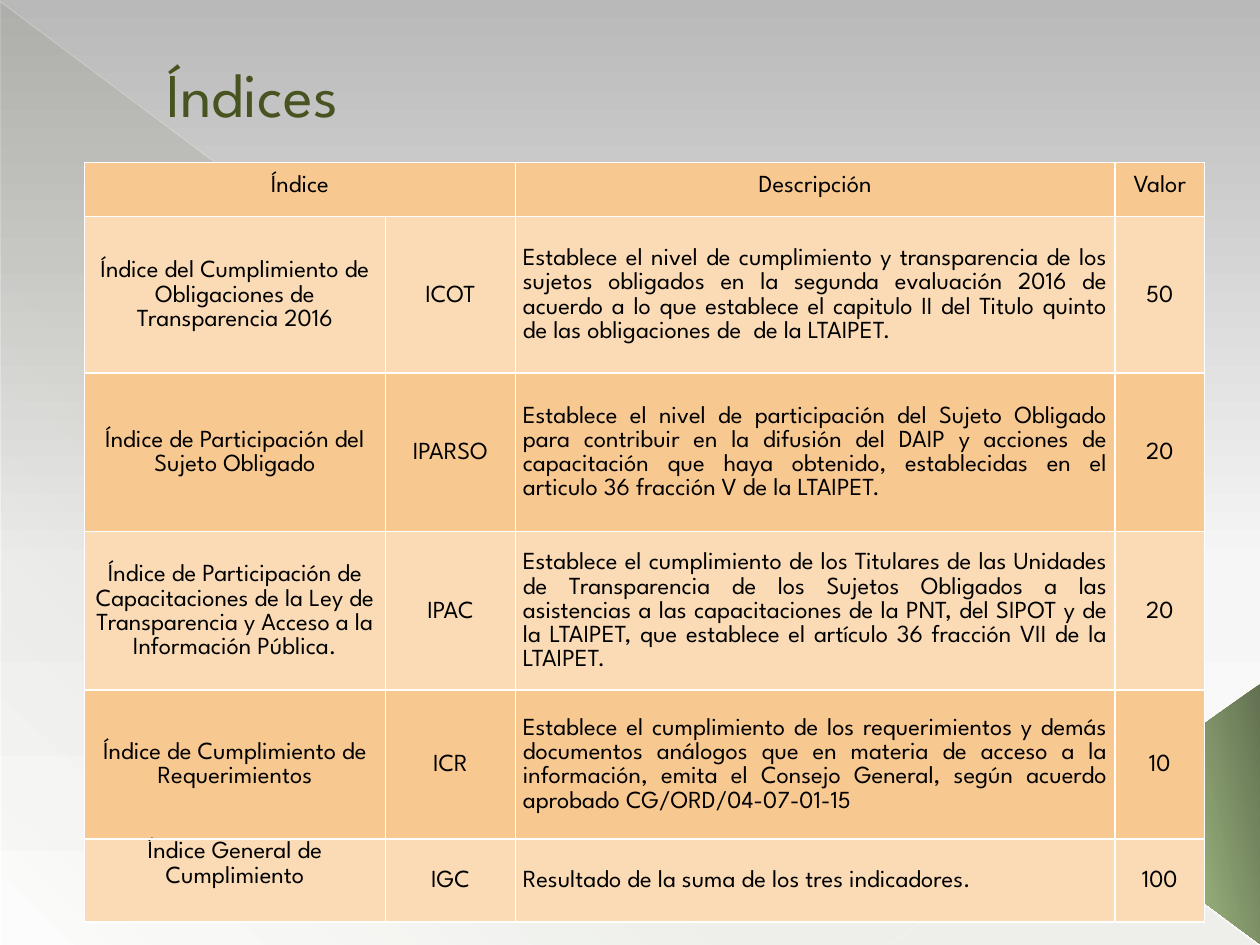
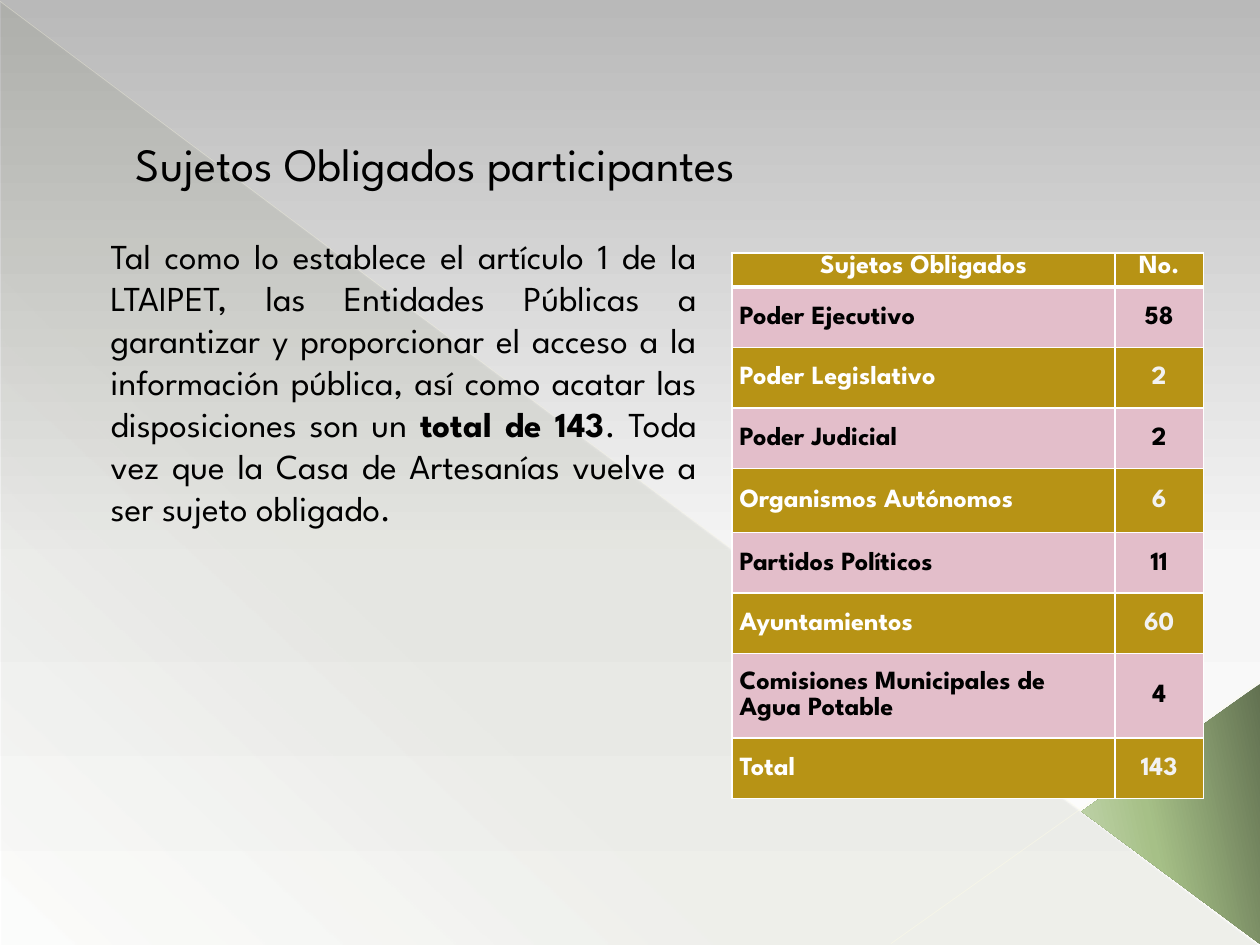
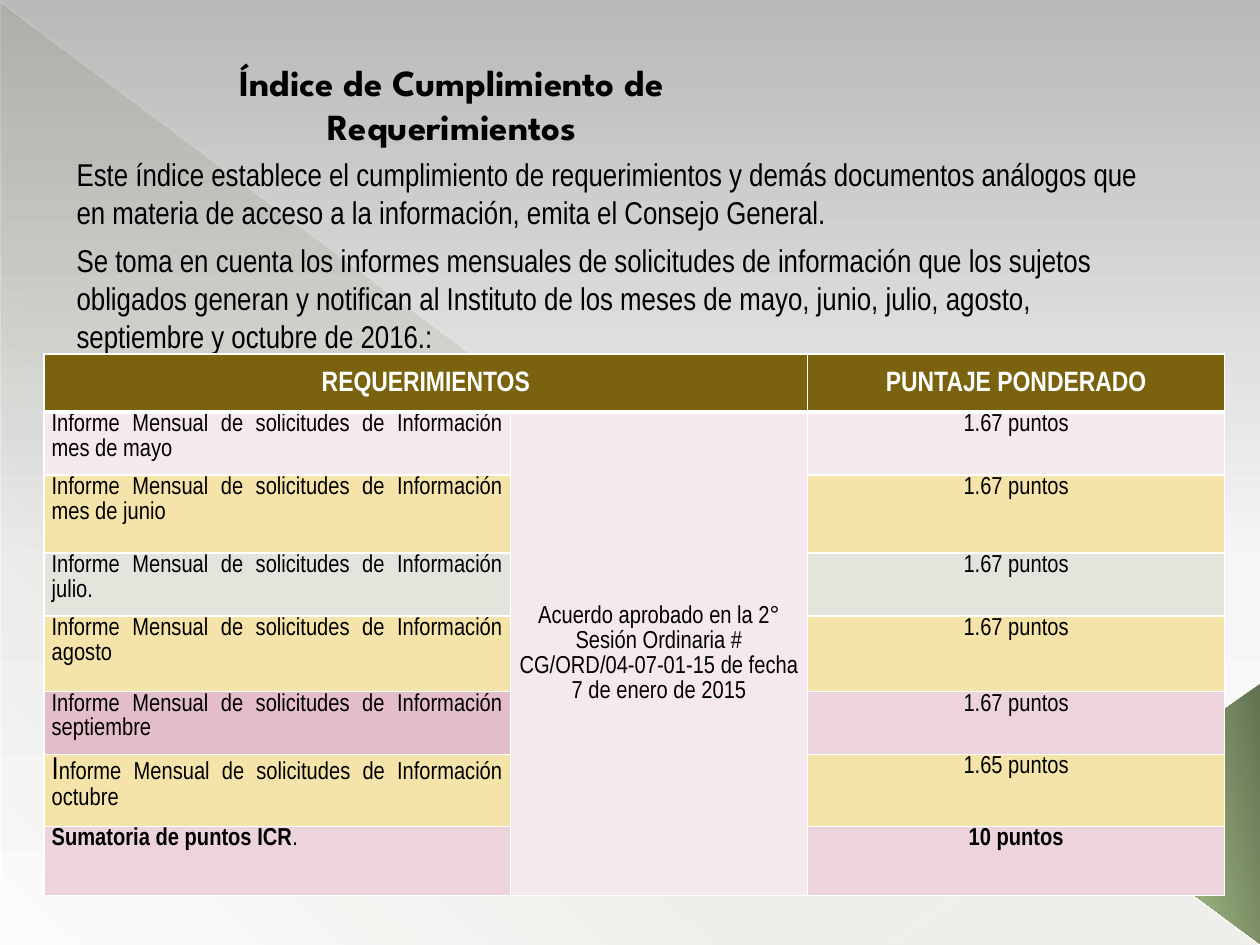
"""Build three slides on transparency indices, each with a table."""
from lxml import etree
from pptx import Presentation
from pptx.dml.color import RGBColor
from pptx.enum import shapes, text
from pptx.oxml.ns import qn
from pptx.util import Inches, Pt

BLACK = RGBColor(0x00, 0x00, 0x00)
WHITE = RGBColor(0xFF, 0xFF, 0xFF)
PALE = RGBColor(0xF2, 0xF2, 0xF2)
OLIVE = RGBColor(0x47, 0x53, 0x20)
MOSS = RGBColor(0x44, 0x4D, 0x26)
CREAM = RGBColor(0xFF, 0xFD, 0xE3)
IVORY = RGBColor(0xFF, 0xFD, 0xE6)
ORANGE = RGBColor(0xF8, 0xC8, 0x91)
PEACH = RGBColor(0xFA, 0xDB, 0xB5)
GOLD = RGBColor(0xB7, 0x93, 0x15)
BROWN = RGBColor(0x7A, 0x62, 0x0E)
PINK = RGBColor(0xE3, 0xBE, 0xCA)
ROSE = RGBColor(0xEC, 0xD3, 0xDC)
BLUSH = RGBColor(0xF6, 0xE9, 0xED)
SAND = RGBColor(0xF5, 0xE4, 0xA9)
SAGE = RGBColor(0xE1, 0xE5, 0xDC)
SKY = [(0, RGBColor(0xB9, 0xB9, 0xB9), 100), (60, RGBColor(0xF6, 0xF6, 0xF6), 100), (100, WHITE, 100)]
SHADE = [(0, MOSS, 10), (70, MOSS, 8), (100, MOSS, 1)]
LEAF = [(0, RGBColor(0x62, 0x71, 0x51), 100), (60, RGBColor(0xA6, 0xC0, 0x87), 100),
        (100, RGBColor(0xC6, 0xD8, 0xB2), 100)]
SPARTAN, NARROW = "League Spartan", "Arial Narrow"
LEFT, MID, JUST = text.PP_ALIGN.LEFT, text.PP_ALIGN.CENTER, text.PP_ALIGN.JUSTIFY
TOP, CORE, BASE = text.MSO_ANCHOR.TOP, text.MSO_ANCHOR.MIDDLE, text.MSO_ANCHOR.BOTTOM


def paint(fill, node, stops, angle):
    """Fill with a gradient of (percent, colour, opacity) stops."""
    fill.gradient()
    grad = node.find(".//" + qn("a:gradFill"))
    grad.find(qn("a:lin")).set("ang", str(angle * 60000))
    steps = grad.find(qn("a:gsLst"))
    for old in list(steps):
        steps.remove(old)
    for place, tone, alpha in stops:
        stop = etree.SubElement(steps, qn("a:gs"), pos=str(place * 1000))
        clr = etree.SubElement(stop, qn("a:srgbClr"), val=str(tone))
        if alpha < 100:
            etree.SubElement(clr, qn("a:alpha"), val=str(alpha * 1000))


def write(frame, paras, size, font, ink, align=LEFT, bold=False, lead=None, gap=0):
    """Write paragraphs of (words, bold, size) runs or plain strings."""
    frame.word_wrap = True
    for n, runs in enumerate(paras):
        para = frame.add_paragraph() if n else frame.paragraphs[0]
        para.alignment = align
        para.space_before = Pt(gap)
        if lead:
            para.line_spacing = lead
        for part in [(runs, bold, size)] if isinstance(runs, str) else runs:
            run = para.add_run()
            run.text, run.font.bold, run.font.size = part[0], part[1], Pt(part[2])
            run.font.name = font
            run.font.color.rgb = ink


deck = Presentation()
deck.slide_width, deck.slide_height = Inches(10), Inches(7.5)
pages = [deck.slides.add_slide(deck.slide_layouts[6]) for n in range(3)]

for page in pages:
    paint(page.background.fill, page.element, SKY, 90)
    wedge = page.shapes.add_shape(shapes.MSO_SHAPE.RIGHT_TRIANGLE,
                                  Inches(0.01), Inches(0.02), Inches(9.98), Inches(7.48))
    paint(wedge.fill, wedge.element.spPr, SHADE, 133)
    for x, y, right, low, tone, width, alpha in [(0, 0.01, 9.99, 7.49, CREAM, 0.39, 35),
                                                 (10, 5.41, 7.07, 7.49, IVORY, 0.47, 45)]:
        line = page.shapes.add_connector(shapes.MSO_CONNECTOR.STRAIGHT,
                                         Inches(x), Inches(y), Inches(right), Inches(low))
        line.line.color.rgb, line.line.width = tone, Pt(width)
        props = line.element.spPr
        etree.SubElement(props.find(".//" + qn("a:srgbClr")), qn("a:alpha"), val=str(alpha * 1000))
        etree.SubElement(props, qn("a:effectLst"))
    peak = page.shapes.add_shape(shapes.MSO_SHAPE.ISOSCELES_TRIANGLE,
                                 Inches(8.26), Inches(5.75), Inches(2.07), Inches(1.42))
    peak.adjustments[0] = 0.51
    peak.rotation = 270
    paint(peak.fill, peak.element.spPr, LEAF, 258)
    for shape in (wedge, peak):
        shape.shadow.inherit = False
        shape.line.fill.background()

titles = [
    (1.22, 0.47, 2.83, 0.61, "Índices", 35.5, OLIVE, LEFT, False),
    (0.98, 0.99, 5.9, 0.57, "Sujetos Obligados participantes", 26.4, BLACK, LEFT, False),
    (1.09, 0.32, 4.99, 0.9, "Índice de Cumplimiento de Requerimientos", 21, BLACK, MID, True),
]
for page, (x, y, wide, high, words, size, ink, align, bold) in zip(pages, titles):
    frame = page.shapes.add_textbox(Inches(x), Inches(y), Inches(wide), Inches(high)).text_frame
    frame.vertical_anchor = BASE
    write(frame, [words], size, SPARTAN, ink, align, bold)

bodies = [
    (pages[1], 0.78, 1.86, 4.85, 4.8, 20, SPARTAN, JUST, [[
        ("Tal como lo establece el artículo 1 de la LTAIPET, las Entidades Públicas a garantizar y "
         "proporcionar el acceso a la información pública, así como acatar las disposiciones son un ",
         False, 20),
        ("total de 143", True, 20),
        (". Toda vez que la Casa de Artesanías vuelve a ser sujeto obligado.", False, 20)]]),
    (pages[2], 0.51, 1.23, 8.74, 1.58, 18, NARROW, LEFT, [
        "Este índice establece el cumplimiento de requerimientos y demás documentos análogos que en "
        "materia de acceso a la información, emita el Consejo General.",
        "Se toma en cuenta los informes mensuales de solicitudes de información que los sujetos "
        "obligados generan y notifican al Instituto de los meses de mayo, junio, julio, agosto, "
        "septiembre y octubre de 2016.:"]),
]
for page, x, y, wide, high, size, font, align, paras in bodies:
    frame = page.shapes.add_textbox(Inches(x), Inches(y), Inches(wide), Inches(high)).text_frame
    frame.margin_top = 0
    write(frame, paras, size, font, BLACK, align, gap=6)

index = [
    ["Índice", None, "Descripción", "Valor"],
    ["Índice del Cumplimiento de Obligaciones de Transparencia 2016", "ICOT",
     "Establece el nivel de cumplimiento y transparencia de los sujetos obligados en la segunda "
     "evaluación 2016 de acuerdo a lo que establece el capitulo II del Titulo quinto de las "
     "obligaciones de  de la LTAIPET.", "50"],
    ["Índice de Participación del Sujeto Obligado", "IPARSO",
     "Establece el nivel de participación del Sujeto Obligado para contribuir en la difusión del "
     "DAIP y acciones de capacitación que haya obtenido, establecidas en el articulo 36 fracción V "
     "de la LTAIPET.", "20"],
    ["Índice de Participación de Capacitaciones de la Ley de Transparencia y Acceso a la "
     "Información Pública.", "IPAC",
     "Establece el cumplimiento de los Titulares de las Unidades de Transparencia de los Sujetos "
     "Obligados a las asistencias a las capacitaciones de la PNT, del SIPOT y de la LTAIPET, que "
     "establece el artículo 36 fracción VII de la LTAIPET.", "20"],
    ["Índice de Cumplimiento de Requerimientos", "ICR",
     "Establece el cumplimiento de los requerimientos y demás documentos análogos que en materia "
     "de acceso a la información, emita el Consejo General, según acuerdo aprobado "
     "CG/ORD/04-07-01-15", "10"],
    ["Índice General de Cumplimiento", "IGC", "Resultado de la suma de los tres indicadores.", "100"],
]
bodycount = [
    ["Sujetos Obligados", "No."], ["Poder Ejecutivo", "58"], ["Poder Legislativo", "2"],
    ["Poder Judicial", "2"], ["Organismos Autónomos", "6"], ["Partidos Políticos", "11"],
    ["Ayuntamientos", "60"], ["Comisiones Municipales de Agua Potable", "4"], ["Total", "143"],
]
lead = "Informe Mensual de solicitudes de Información "
points = [["REQUERIMIENTOS", None, "PUNTAJE PONDERADO"]]
points += [[lead + month, None, "1.67 puntos"]
           for month in ("mes de mayo", "mes de junio", "julio.", "agosto", "septiembre")]
points += [
    [[("I", False, 18), (lead[1:] + "octubre", False, 14)], None, "1.65 puntos"],
    [[("Sumatoria de puntos ICR", True, 14), (".", False, 14)], None, [("10 puntos", True, 14)]],
]
points[1][1] = ("Acuerdo aprobado en la 2° Sesión Ordinaria # CG/ORD/04-07-01-15 "
                "de fecha 7 de enero de 2015")

tables = [
    dict(at=(0.67, 1.29), cols=[2.39, 1.03, 4.76, 0.71], rows=[0.43, 1.24, 1.26, 1.18, 1.18, 0.66],
         data=index, fills=[ORANGE, PEACH] * 3, aligns=[MID, MID, JUST, MID], font=SPARTAN,
         sizes=(14, 14), bolds=(False, False), leads=(1.5, 1.07), rule=1, pad=0.01,
         tops=[(0, 0), (0, 2), (0, 3), (5, 0)], spans=[(0, 0, 0, 1)], odd={}),
    dict(at=(5.81, 2.01), cols=[3.04, 0.7], rows=[0.13, 0.48, 0.48, 0.48, 0.51, 0.48, 0.48, 0.67, 0.48],
         data=bodycount, fills=[GOLD] + [PINK, GOLD] * 4, aligns=[LEFT, MID], font=SPARTAN,
         sizes=(15, 15), bolds=(True, True), leads=(1.07, 1.07), rule=3, pad=0,
         tops=[(0, 0), (0, 1)], spans=[], odd={}),
    dict(at=(0.35, 2.81), cols=[3.7, 2.36, 3.31], rows=[0.46, 0.49, 0.62, 0.47, 0.6, 0.47, 0.55, 0.55],
         data=points, fills=[BROWN, BLUSH, SAND, SAGE, SAND, ROSE, SAND, ROSE],
         aligns=[JUST, MID, MID], font=NARROW, sizes=(16, 14), bolds=(True, False),
         leads=(1.07, 1.07), rule=3, pad=0, tops=[(r, c) for r in range(1, 8) for c in (0, 2)],
         spans=[(0, 0, 0, 1), (1, 1, 7, 1)], odd={(5, 0): PINK}),
]
for page, spec in zip(pages, tables):
    cols, rows = spec["cols"], spec["rows"]
    x, y = spec["at"]
    grid = page.shapes.add_table(len(rows), len(cols), Inches(x), Inches(y),
                                 Inches(sum(cols)), Inches(sum(rows))).table
    grid.first_row = grid.horz_banding = False
    for col, wide in zip(grid.columns, cols):
        col.width = Inches(wide)
    for row, high in zip(grid.rows, rows):
        row.height = Inches(high)
    for r, items in enumerate(spec["data"]):
        body = int(r > 0)
        for c, item in enumerate(items):
            cell = grid.cell(r, c)
            cell.margin_left = cell.margin_right = Inches(0.06)
            cell.margin_top, cell.margin_bottom = Inches(spec["pad"]), 0
            cell.vertical_anchor = TOP if (r, c) in spec["tops"] else CORE
            for side in "LRTB":
                thick = spec["rule"] if (r, side) in [(0, "B"), (1, "T")] else 1
                edge = etree.SubElement(cell._tc.get_or_add_tcPr(), qn("a:ln" + side), w=str(Pt(thick)))
                solid = etree.SubElement(edge, qn("a:solidFill"))
                etree.SubElement(solid, qn("a:srgbClr"), val=str(WHITE))
            tone = spec["odd"].get((r, c), spec["fills"][r])
            cell.fill.solid()
            cell.fill.fore_color.rgb = tone
            ink = BLACK
            if tone in (GOLD, BROWN):
                ink = PALE if r and c else WHITE
            if item:
                write(cell.text_frame, [item], spec["sizes"][body], spec["font"], ink,
                      spec["aligns"][c] if r else MID, spec["bolds"][body], spec["leads"][body])
    for r, c, low, right in spec["spans"]:
        grid.cell(r, c).merge(grid.cell(low, right))

deck.save("out.pptx")
